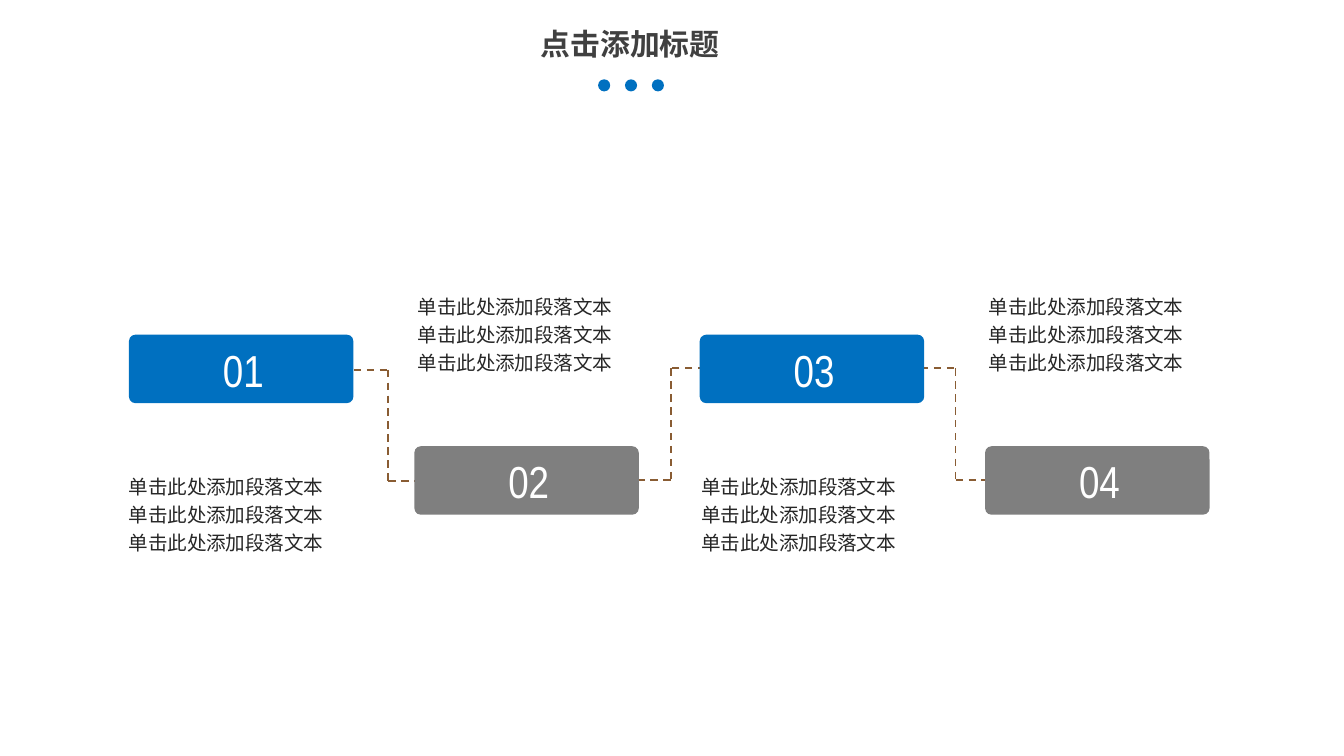
from pptx import Presentation
from pptx.dml.color import RGBColor
from pptx.enum.dml import MSO_LINE
from pptx.enum.shapes import MSO_CONNECTOR, MSO_SHAPE
from pptx.enum.text import MSO_AUTO_SIZE, PP_ALIGN
from pptx.oxml.ns import qn
from pptx.util import Inches, Pt
from lxml import etree

ROUNDED = MSO_SHAPE.ROUNDED_RECTANGLE
OVAL = MSO_SHAPE.OVAL
STRAIGHT = MSO_CONNECTOR.STRAIGHT
DASH = MSO_LINE.DASH
GROW = MSO_AUTO_SIZE.SHAPE_TO_FIT_TEXT
LEFT, CENTER = PP_ALIGN.LEFT, PP_ALIGN.CENTER

BLUE, GRAY, BROWN, WHITE = "0070C0", "7F7F7F", "895C33", "FFFFFF"
TITLE_COLOR, BODY_COLOR = "404040", "262626"
CJK_FONT, NUMBER_FONT = "Noto Sans CJK SC", "Arial Narrow"


def color(value):
    return RGBColor.from_string(value)


class Page:
    def __init__(self, deck):
        self.slide = deck.slides.add_slide(deck.slide_layouts[6])

    def shape(self, kind, left, top, width, height, fill):
        shape = self.slide.shapes.add_shape(
            kind, Inches(left), Inches(top), Inches(width), Inches(height))
        shape.shadow.inherit = False
        shape.fill.solid()
        shape.fill.fore_color.rgb = color(fill)
        shape.line.fill.background()
        return shape

    def card(self, left, top, fill):
        card = self.shape(ROUNDED, left, top, 1.67, 0.51, fill)
        card.adjustments[0] = 0.095

    def dashed_line(self, start, end):
        line = self.slide.shapes.add_connector(
            STRAIGHT, *(Inches(value) for value in start + end))
        line.line.color.rgb = color(BROWN)
        line.line.width = Pt(1)
        line.line.dash_style = DASH
        etree.SubElement(line._element.spPr, qn("a:effectLst"))

    def elbow(self, *points):
        for start, end in zip(points, points[1:]):
            self.dashed_line(start, end)

    def text(self, words, left, top, width, height, size, font, ink,
             bold=False, align=LEFT, wrap=True, spacing=None):
        box = self.slide.shapes.add_textbox(
            Inches(left), Inches(top), Inches(width), Inches(height))
        frame = box.text_frame
        frame.text = words
        frame.word_wrap = wrap
        frame.auto_size = GROW
        para = frame.paragraphs[0]
        para.alignment = align
        para.line_spacing = spacing
        span = para.runs[0]
        span.font.size = Pt(size)
        span.font.bold = bold
        span.font.color.rgb = color(ink)
        span.font.name = font
        east_asian = etree.SubElement(span.font._element, qn("a:ea"))
        east_asian.set("typeface", font)


def main():
    deck = Presentation()
    # Widescreen, 16 to 9
    deck.slide_width = Inches(10)
    deck.slide_height = Inches(10 * 9 / 16)
    page = Page(deck)

    # Title with three dots
    page.text("点击添加标题", 2.47, 0.14, 4.44, 0.37, 16, CJK_FONT,
              TITLE_COLOR, bold=True, align=CENTER)
    for index in range(3):
        page.shape(OVAL, 4.45 + 0.2 * index, 0.59, 0.09, 0.09, BLUE)

    # Dashed elbows, each from the upper card to the lower one
    for middle, upper, reach in ((2.89, 2.75, 0.45), (4.99, 2.74, -0.45),
                                 (7.11, 2.74, 0.45)):
        lower = upper + 0.83
        page.elbow((middle - reach, upper), (middle, upper),
                   (middle, lower), (middle + reach, lower))

    # Numbered cards, alternating high and low, with captions opposite
    first_left, last_left = 0.96, 7.33
    pitch = (last_left - first_left) / 3
    caption = "单击此处添加段落文本" * 3
    for index, caption_left in enumerate((0.86, 3.01, 5.12, 7.26)):
        left = first_left + pitch * index
        top, fill, caption_top = ((3.32, GRAY, 2.11) if index % 2
                                  else (2.49, BLUE, 3.45))
        page.card(left, top, fill)
        page.text(f"{index + 1:02}", left + 0.6, top + 0.01, 0.55, 0.5, 24,
                  NUMBER_FONT, WHITE, wrap=False)
        page.text(caption, caption_left, caption_top, 1.76, 0.89, 10.5,
                  CJK_FONT, BODY_COLOR, spacing=1.2)

    deck.save("out.pptx")


if __name__ == "__main__":
    main()
